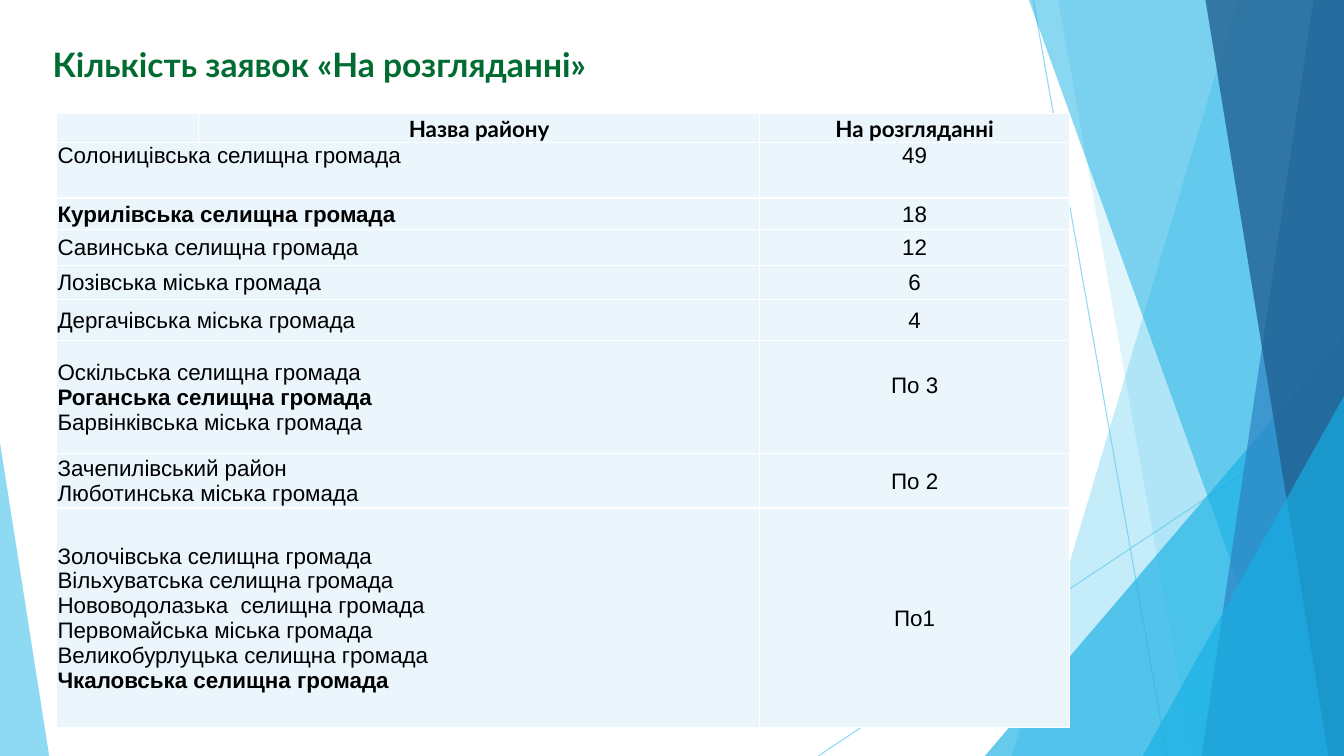
from lxml import etree
from pptx import Presentation
from pptx.dml.color import RGBColor
from pptx.enum import shapes, text
from pptx.oxml.ns import qn
from pptx.util import Cm, Pt

GREEN = RGBColor(0x00, 0x6C, 0x31)
BLACK = RGBColor(0x00, 0x00, 0x00)
WHITE = RGBColor(0xFF, 0xFF, 0xFF)
CELL_BLUE = RGBColor(0xEA, 0xF6, 0xFC)
SKY = RGBColor(0x5F, 0xCB, 0xEF)
CYAN = RGBColor(0x17, 0xB0, 0xE4)
BLUE = RGBColor(0x2E, 0x83, 0xC3)
NAVY = RGBColor(0x22, 0x62, 0x92)
WIDTH, HEIGHT = 33.87, 19.05


def set_opacity(shape, percent):
    for color in shape._element.spPr.iter(qn("a:srgbClr")):
        etree.SubElement(color, qn("a:alpha"), val=str(percent * 1000))


def add_border(cell):
    """Give the cell a thin white line on all four sides."""
    properties = cell._tc.get_or_add_tcPr()
    for position, side in enumerate(("a:lnL", "a:lnR", "a:lnT", "a:lnB")):
        line = etree.Element(qn(side), w=str(Pt(1)))
        fill = etree.SubElement(line, qn("a:solidFill"))
        etree.SubElement(fill, qn("a:srgbClr"), val=str(WHITE))
        properties.insert(position, line)


presentation = Presentation()
presentation.slide_width, presentation.slide_height = Cm(WIDTH), Cm(HEIGHT)
slide = presentation.slides.add_slide(presentation.slide_layouts[5])

# Thin lines behind the facets
for start_x, start_y, end_x in ((26.04, 0, 29.41), (WIDTH, 10.24, 20.62)):
    line = slide.shapes.add_connector(
        shapes.MSO_CONNECTOR.STRAIGHT, Cm(start_x), Cm(start_y), Cm(end_x), Cm(HEIGHT))
    line.line.color.rgb = SKY
    line.line.width = Pt(0.75)
    set_opacity(line, 70)
    etree.SubElement(line._element.spPr, qn("a:effectLst"))

# Bands: x at top, x at bottom. Triangles: left, top, width, apex position.
facets = [
    ("band", (31.19, 25.5), SKY, 36),
    ("band", (26.67, 30.05), SKY, 20),
    ("triangle", (24.82, 8.46, 9.05, 1), CYAN, 66),
    ("band", (25.93, 32.79), CYAN, 50),
    ("band", (33.1, 30.28), BLUE, 70),
    ("band", (30.38, 33.48), NAVY, 80),
    ("triangle", (28.8, 9.98, 5.07, 1), CYAN, 66),
    ("triangle", (0, 11.15, 1.24, 0), SKY, 70),
]
for kind, geometry, color, opacity in facets:
    if kind == "band":
        top_x, bottom_x = geometry
        builder = slide.shapes.build_freeform(Cm(top_x), 0)
        builder.add_line_segments([
            (Cm(WIDTH), 0), (Cm(WIDTH), Cm(HEIGHT)), (Cm(bottom_x), Cm(HEIGHT))])
        facet = builder.convert_to_shape()
    else:
        left, top, width, apex = geometry
        facet = slide.shapes.add_shape(
            shapes.MSO_SHAPE.ISOSCELES_TRIANGLE,
            Cm(left), Cm(top), Cm(width), Cm(HEIGHT - top))
        facet.adjustments[0] = apex
    facet.shadow.inherit = False
    facet.fill.solid()
    facet.fill.fore_color.rgb = color
    facet.line.fill.background()
    set_opacity(facet, opacity)

# Title
title = slide.shapes.title
title.left, title.top, title.width, title.height = Cm(1.07), Cm(0.97), Cm(14.99), Cm(1.27)
title.text_frame.word_wrap = False
title.text_frame.auto_size = text.MSO_AUTO_SIZE.NONE
title.text_frame.vertical_anchor = text.MSO_ANCHOR.MIDDLE
paragraph = title.text_frame.paragraphs[0]
paragraph.alignment = text.PP_ALIGN.LEFT
run = paragraph.add_run()
run.text = "Кількість заявок «На розгляданні»"
run.font.name, run.font.size, run.font.bold = "Lato", Pt(24), True
run.font.color.rgb = GREEN

# Table: row height, community names, number of applications
rows = [
    (0.7, ["Назва району"], "На розгляданні"),
    (1.4, ["Солоницівська селищна громада"], "49"),
    (0.79, ["Курилівська селищна громада"], "18"),
    (0.91, ["Савинська селищна громада"], "12"),
    (0.86, ["Лозівська міська громада"], "6"),
    (1.04, ["Дергачівська міська громада"], "4"),
    (2.84, ["Оскільська селищна громада", "Роганська селищна громада",
            "Барвінківська міська громада"], "По 3"),
    (1.37, ["Зачепилівський район", "Люботинська міська громада"], "По 2"),
    (5.54, ["Золочівська селищна громада", "Вільхуватська селищна громада",
            "Нововодолазька  селищна громада", "Первомайська міська громада",
            "Великобурлуцька селищна громада", "Чкаловська селищна громада"], "По1"),
]
bold_names = {"Курилівська селищна громада", "Роганська селищна громада",
              "Чкаловська селищна громада"}
column_widths = (3.58, 14.15, 7.8)
table = slide.shapes.add_table(
    len(rows), len(column_widths), Cm(1.42), Cm(2.87),
    Cm(sum(column_widths)), Cm(sum(row[0] for row in rows))).table
table.first_row = table.horz_banding = False
for column, width in zip(table.columns, column_widths):
    column.width = Cm(width)

for index, (height, names, count) in enumerate(rows):
    is_header = index == 0
    table.rows[index].height = Cm(height)
    for cell in table.rows[index].cells:
        cell.margin_left = cell.margin_right = cell.margin_top = Cm(0.03)
        cell.margin_bottom = 0
        cell.vertical_anchor = text.MSO_ANCHOR.TOP if index == 1 else text.MSO_ANCHOR.MIDDLE
        cell.fill.solid()
        cell.fill.fore_color.rgb = CELL_BLUE
        add_border(cell)
    if is_header:
        empty_paragraph = table.cell(0, 0).text_frame.paragraphs[0]
        etree.SubElement(empty_paragraph._p, qn("a:endParaRPr"), sz="1600")
    else:
        table.cell(index, 0).merge(table.cell(index, 1))
    if count == "По 3":
        table.cell(index, 2).margin_bottom = Cm(0.6)

    for column, lines in ((1 if is_header else 0, names), (2, [count])):
        frame = table.cell(index, column).text_frame
        for number, content in enumerate(lines):
            paragraph = frame.add_paragraph() if number else frame.paragraphs[0]
            centred = is_header or column == 2
            paragraph.alignment = text.PP_ALIGN.CENTER if centred else text.PP_ALIGN.LEFT
            run = paragraph.add_run()
            run.text = content
            run.font.name = "Lato" if is_header else "Arial"
            run.font.size = Pt(16)
            run.font.bold = is_header or content in bold_names
            run.font.color.rgb = BLACK

presentation.save("out.pptx")
